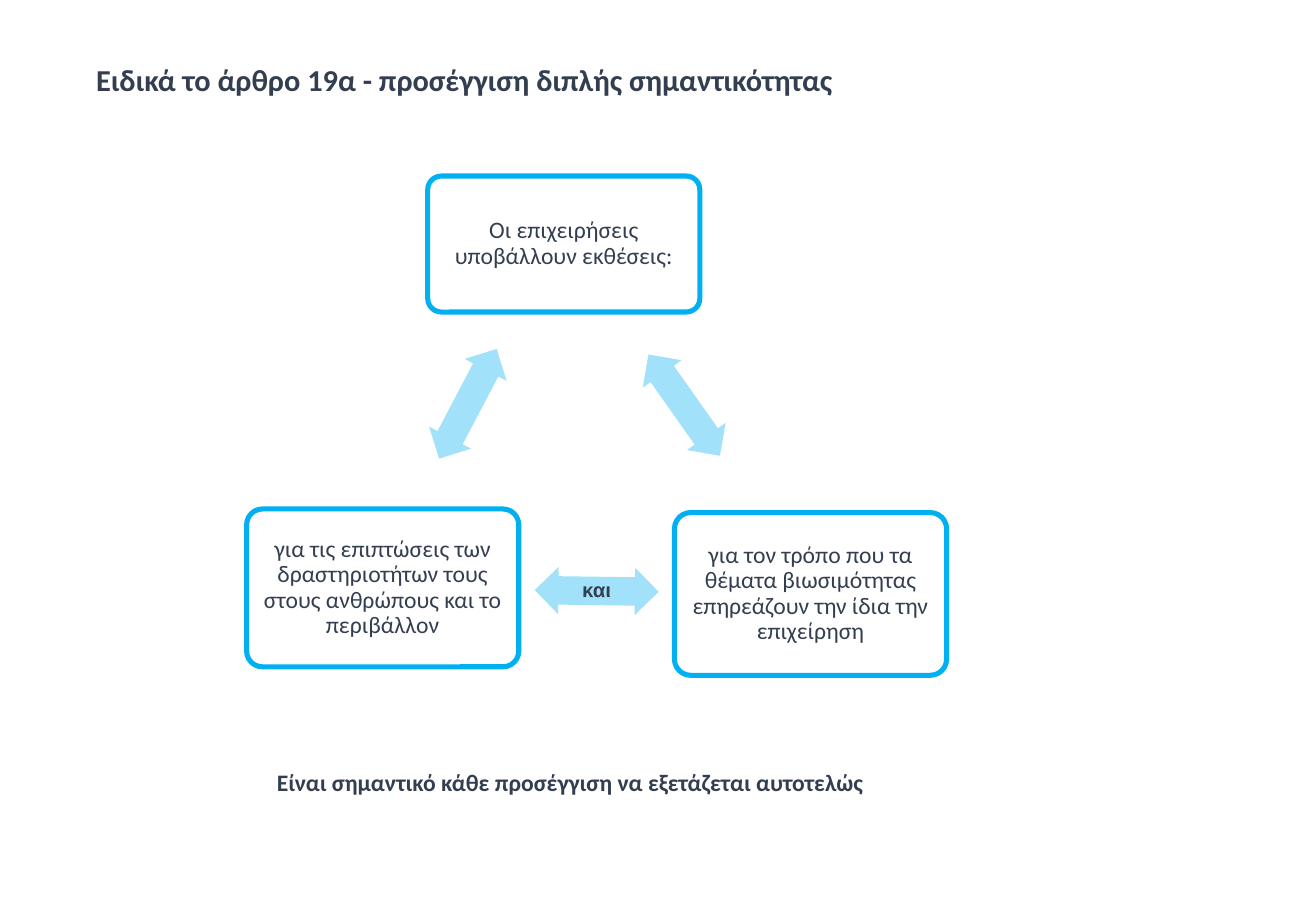
from dataclasses import dataclass

from lxml import etree
from pptx import Presentation
from pptx.dml.color import RGBColor
from pptx.enum.shapes import MSO_SHAPE
from pptx.enum.text import MSO_ANCHOR, PP_ALIGN
from pptx.oxml.ns import qn
from pptx.util import Inches, Pt

ROUNDED, DOUBLE_ARROW = MSO_SHAPE.ROUNDED_RECTANGLE, MSO_SHAPE.LEFT_RIGHT_ARROW
TOP, MIDDLE = MSO_ANCHOR.TOP, MSO_ANCHOR.MIDDLE
LEFT, CENTER = PP_ALIGN.LEFT, PP_ALIGN.CENTER
INK, BLUE = "333F50", "00B0F0"
ARROW_OPACITY = 37

deck = Presentation()
deck.slide_width, deck.slide_height = Inches(10.83), Inches(7.5)
TITLE_ONLY = deck.slide_layouts[5]


@dataclass
class Area:
    """Position and size in percent of the slide's width and height."""
    left: float
    top: float
    width: float
    height: float

    def lengths(self) -> tuple[int, int, int, int]:
        across, down = deck.slide_width / 100, deck.slide_height / 100
        return (int(self.left * across), int(self.top * down),
                int(self.width * across), int(self.height * down))


@dataclass
class Statement:
    left: float
    top: float
    height: float
    text: str


@dataclass
class Arrow:
    left: float
    top: float
    rotation: float
    text: str = ""


STATEMENTS = [
    Statement(32.5, 19.33, 14.93, "Οι επιχειρήσεις υποβάλλουν εκθέσεις:"),
    Statement(18.74, 55.87, 17.33, "για τις επιπτώσεις των δραστηριοτήτων τους "
              "στους ανθρώπους και το περιβάλλον"),
    Statement(51.25, 56.27, 17.87, "για τον τρόπο που τα θέματα βιωσιμότητας "
              "επηρεάζουν την ίδια την επιχείρηση"),
]
ARROWS = [
    Arrow(30.84, 41.73, 117.7),
    Arrow(40.63, 62.27, 0.8, "και"),
    Arrow(47.28, 41.87, 234.8),
]


def color(value: str) -> RGBColor:
    return RGBColor.from_string(value)


def write(shape, text: str, size: float, bold: bool = False, font: str = "Calibri",
          align=CENTER, anchor=MIDDLE, spacing: float = 0.9,
          side: float = 0.06, edge: float = 0.06) -> None:
    frame = shape.text_frame
    frame.text = text
    frame.word_wrap = True
    frame.vertical_anchor = anchor
    frame.margin_left = frame.margin_right = Inches(side)
    frame.margin_top = frame.margin_bottom = Inches(edge)
    para = frame.paragraphs[0]
    para.alignment, para.line_spacing = align, spacing
    for span in para.runs:
        span.font.name, span.font.size, span.font.bold = font, Pt(size), bold
        span.font.color.rgb = color(INK)


def add_statement(page, item: Statement) -> None:
    area = Area(item.left, item.top, 20.68, item.height)
    box = page.shapes.add_shape(ROUNDED, *area.lengths())
    box.shadow.inherit = False
    box.adjustments[0] = 0.1
    box.fill.background()
    box.line.color.rgb = color(BLUE)
    box.line.width = Pt(3)
    write(box, item.text, 14)


def add_arrow(page, item: Arrow) -> None:
    area = Area(item.left, item.top, 9.42, 5.2)
    arrow = page.shapes.add_shape(DOUBLE_ARROW, *area.lengths())
    arrow.shadow.inherit = False
    arrow.rotation = item.rotation
    arrow.adjustments[0], arrow.adjustments[1] = 0.6, 0.5
    arrow.line.fill.background()
    arrow.fill.solid()
    arrow.fill.fore_color.rgb = color(BLUE)
    tint = arrow.fill._xPr.find(qn("a:solidFill"))[0]
    etree.SubElement(tint, qn("a:alpha"), val=str(ARROW_OPACITY * 1000))
    if item.text:
        write(arrow, item.text, 12, bold=True, font="Arial", side=0, edge=0)


def main() -> None:
    page = deck.slides.add_slide(TITLE_ONLY)

    # Title
    title = page.shapes.title
    title.left, title.top, title.width, title.height = Area(
        6.93, 6.93, 86.15, 6.93).lengths()
    write(title, "Ειδικά το άρθρο 19α - προσέγγιση διπλής σημαντικότητας", 18,
          bold=True, align=LEFT, anchor=TOP, side=0.04, edge=0.02)

    # Triangle of statements joined by arrows
    for statement in STATEMENTS:
        add_statement(page, statement)
    for arrow in ARROWS:
        add_arrow(page, arrow)

    # Closing remark
    remark = page.shapes.add_textbox(*Area(20.13, 83.6, 47.09, 4.53).lengths())
    write(remark, "Είναι σημαντικό κάθε προσέγγιση να εξετάζεται αυτοτελώς", 14,
          bold=True, align=LEFT, anchor=TOP, spacing=1.0, side=0.1, edge=0.05)

    deck.save("out.pptx")


if __name__ == "__main__":
    main()
